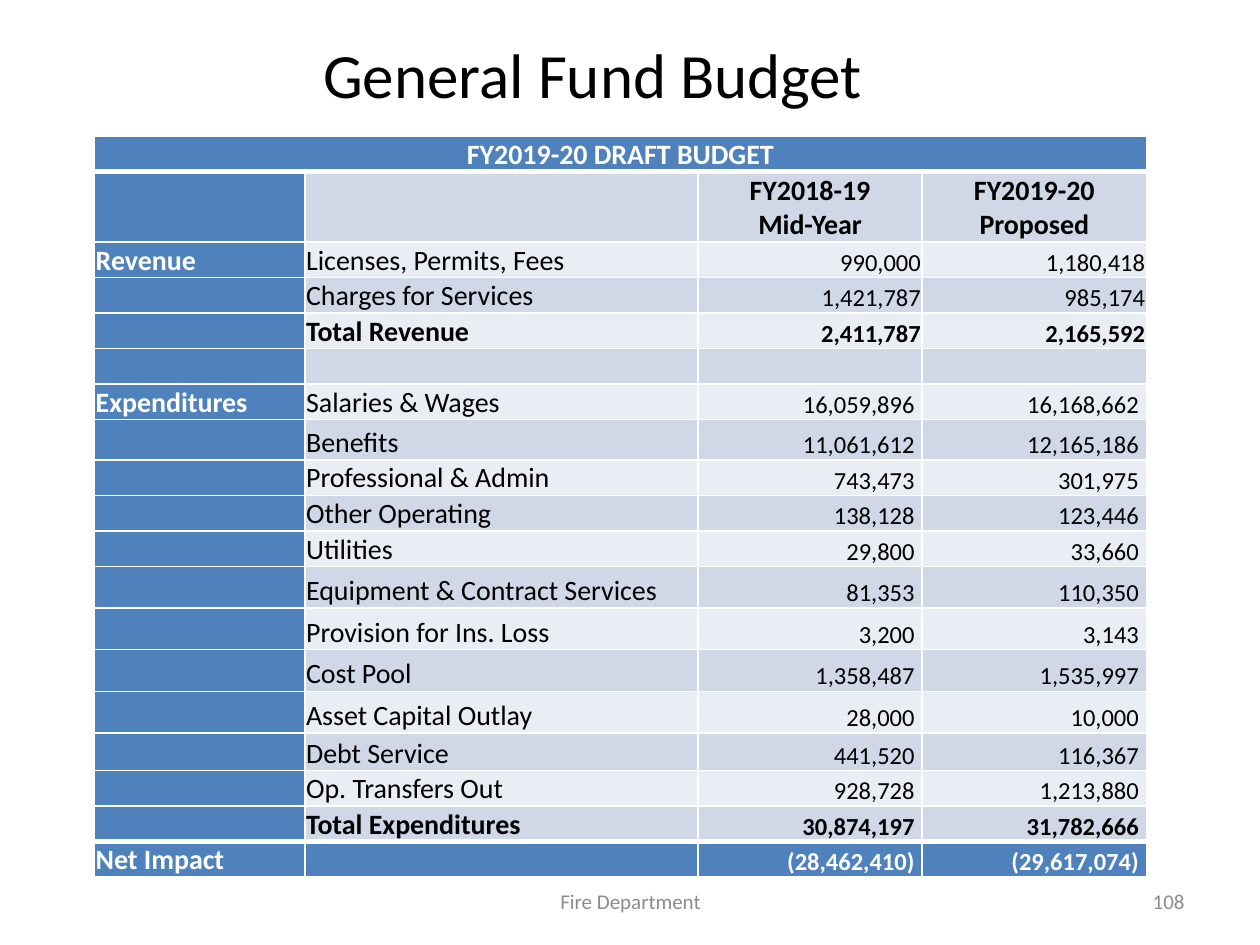
"""Builds the General Fund Budget slide with its draft budget table."""
from lxml.etree import SubElement
from pptx import Presentation
from pptx.dml.color import RGBColor
from pptx.enum.text import MSO_ANCHOR, PP_ALIGN
from pptx.oxml.ns import qn
from pptx.util import Inches, Pt

BLUE = RGBColor(0x4F, 0x81, 0xBD)
DARK_BAND = RGBColor(0xD0, 0xD8, 0xE8)
LIGHT_BAND = RGBColor(0xE9, 0xED, 0xF4)
WHITE = RGBColor(0xFF, 0xFF, 0xFF)
BLACK = RGBColor(0, 0, 0)
GREY = RGBColor(0x8C, 0x8C, 0x8C)

COLUMN_WIDTHS = [1.67, 3.12, 1.78, 1.78]
ROW_HEIGHT = 0.28
SPECIAL_HEIGHTS = {1: 0.56, 7: 0.32, 11: 0.33, 12: 0.33, 13: 0.33, 14: 0.33, 15: 0.3}
FIRST_EXPENDITURE = 6

BUDGET = [
    ("FY2019-20 DRAFT BUDGET", "", "", ""),
    ("", "", "FY2018-19\nMid-Year", "FY2019-20 Proposed"),
    ("Revenue", "Licenses, Permits, Fees", "990,000", "1,180,418"),
    ("", "Charges for Services", "1,421,787", "985,174"),
    ("", "Total Revenue", "2,411,787", "2,165,592"),
    ("", "", "", ""),
    ("Expenditures", "Salaries & Wages", "16,059,896", "16,168,662"),
    ("", "Benefits", "11,061,612", "12,165,186"),
    ("", "Professional & Admin", "743,473", "301,975"),
    ("", "Other Operating", "138,128", "123,446"),
    ("", "Utilities", "29,800", "33,660"),
    ("", "Equipment & Contract Services", "81,353", "110,350"),
    ("", "Provision for Ins. Loss", "3,200", "3,143"),
    ("", "Cost Pool", "1,358,487", "1,535,997"),
    ("", "Asset Capital Outlay", "28,000", "10,000"),
    ("", "Debt Service", "441,520", "116,367"),
    ("", "Op. Transfers Out", "928,728", "1,213,880"),
    ("", "Total Expenditures", "30,874,197", "31,782,666"),
    ("Net Impact", "", "(28,462,410)", "(29,617,074)"),
]


def write(frame, text, size=16, color=BLACK, bold=False, align=PP_ALIGN.LEFT, font="Calibri"):
    """Fill a text frame with one formatted paragraph per line of text."""
    for index, line in enumerate(text.split("\n")):
        para = frame.add_paragraph() if index else frame.paragraphs[0]
        para.alignment = align
        if not line:
            SubElement(para._p, qn("a:endParaRPr"), sz=str(size * 100))
            continue
        span = para.add_run()
        span.text = line
        span.font.name = font
        span.font.size = Pt(size)
        span.font.bold = bold
        span.font.color.rgb = color


def set_borders(cell, top=1, bottom=1):
    """Draw white borders, with widths in points, around a cell."""
    properties = cell._tc.get_or_add_tcPr()
    for tag, width in (("lnL", 1), ("lnR", 1), ("lnT", top), ("lnB", bottom)):
        line = SubElement(properties, qn(f"a:{tag}"), w=str(Pt(width)))
        fill = SubElement(line, qn("a:solidFill"))
        SubElement(fill, qn("a:srgbClr"), val=str(WHITE))


class BudgetPage:
    """Holds the deck, the current page and its measures."""

    def __init__(self):
        """Start a deck with one title-only page."""
        self.deck = Presentation()
        self.deck.slide_width, self.deck.slide_height = Inches(10), Inches(7.5)
        self.page = self.deck.slides.add_slide(self.deck.slide_layouts[5])

    def area(self, left, top, width, height):
        """Turn shares of the page into lengths."""
        across, down = self.deck.slide_width, self.deck.slide_height
        return int(left * across), int(top * down), int(width * across), int(height * down)

    def title(self, text, *shares):
        """Place and fill the title placeholder."""
        box = self.page.shapes.title
        box.left, box.top, box.width, box.height = self.area(*shares)
        box.text_frame.vertical_anchor = MSO_ANCHOR.MIDDLE
        write(box.text_frame, text, size=36, align=PP_ALIGN.CENTER)

    def footer(self, text, align, *shares):
        """Add a small grey text at the foot of the page."""
        frame = self.page.shapes.add_textbox(*self.area(*shares)).text_frame
        frame.word_wrap = True
        frame.vertical_anchor = MSO_ANCHOR.MIDDLE
        write(frame, text, size=12, color=GREY, align=align)

    def table(self, rows, *shares):
        """Add the budget table."""
        shape = self.page.shapes.add_table(len(rows), len(COLUMN_WIDTHS), *self.area(*shares))
        table = shape.table
        table.first_row = table.horz_banding = False
        for column, width in zip(table.columns, COLUMN_WIDTHS):
            column.width = Inches(width)
        for index, values in enumerate(rows):
            table.rows[index].height = Inches(SPECIAL_HEIGHTS.get(index, ROW_HEIGHT))
            for place, text in enumerate(values):
                self.cell(table.cell(index, place), text, index, place, len(rows) - 1)
        table.cell(0, 0).merge(table.cell(0, len(COLUMN_WIDTHS) - 1))

    def cell(self, cell, text, row, column, last):
        """Format one cell by its place in the table."""
        number = row > 1 and column > 1
        blue = column == 0 or row in (0, last)
        cell.margin_left = cell.margin_right = cell.margin_top = Inches(0.01)
        cell.margin_bottom = 0
        if number and row >= FIRST_EXPENDITURE:
            cell.margin_right = Inches(0.06)
        cell.vertical_anchor = MSO_ANCHOR.BOTTOM
        set_borders(cell, top=3 if row in (1, last) else 1, bottom=3 if row in (0, last - 1) else 1)
        cell.fill.solid()
        cell.fill.fore_color.rgb = BLUE if blue else DARK_BAND if row % 2 else LIGHT_BAND
        align = PP_ALIGN.CENTER if row < 2 else PP_ALIGN.RIGHT if number else PP_ALIGN.LEFT
        write(cell.text_frame, text, size=14 if number else 16, color=WHITE if blue else BLACK,
              bold=blue or row in (1, 4, last - 1), align=align)


def main():
    """Build and save the page."""
    budget = BudgetPage()
    budget.table(BUDGET, 0.075, 0.144, 0.835, 0.78)
    budget.title("General Fund Budget", 0.083, 0.033, 0.775, 0.09)
    budget.footer("Fire Department", PP_ALIGN.CENTER, 0.342, 0.927, 0.317, 0.053)
    budget.footer("108", PP_ALIGN.RIGHT, 0.717, 0.927, 0.233, 0.053)
    budget.deck.save("out.pptx")


if __name__ == "__main__":
    main()
